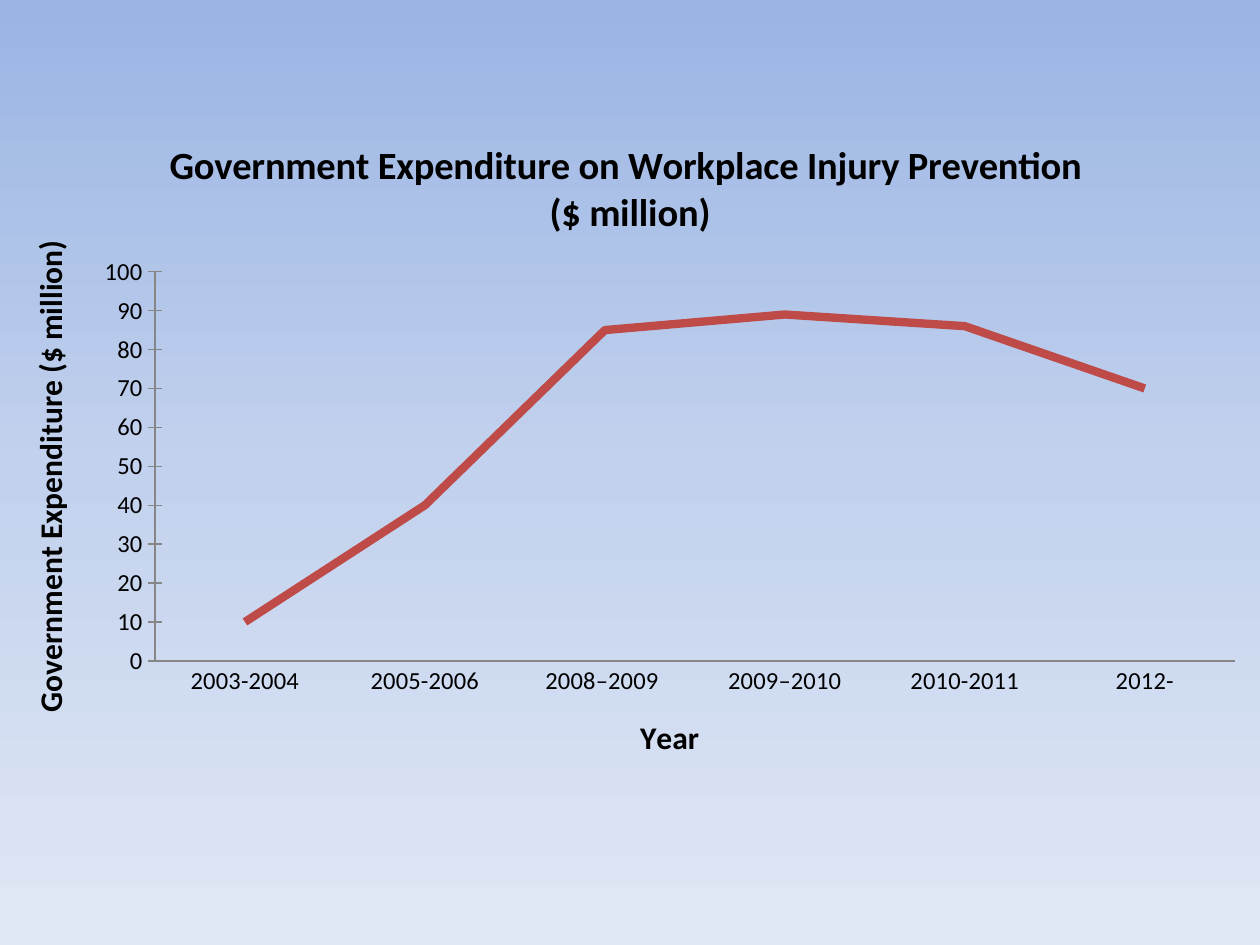
from copy import deepcopy
from dataclasses import dataclass

from pptx import Presentation
from pptx.chart.data import CategoryChartData
from pptx.dml.color import RGBColor
from pptx.enum.chart import XL_CHART_TYPE, XL_TICK_MARK
from pptx.util import Inches, Pt


@dataclass(frozen=True)
class Theme:
    font: str = "Calibri"
    ink: str = "000000"
    axis: str = "868686"
    trend: str = "BE4B48"
    sky: tuple = ((0, "9AB5E4"), (0.5, "C2D1ED"), (1, "E1E8F5"))
    title_size: int = 22
    axis_title_size: int = 18
    label_size: int = 14
    base_size: int = 10


THEME = Theme()
SPENDING = {
    "2003-2004": 10,
    "2005-2006": 40,
    "2008–2009 ": 85,
    "2009–2010": 89,
    "2010-2011": 86,
    "2012-": 70,
}


def style_font(font, size, bold=False, color=THEME.ink):
    font.name = THEME.font
    font.size = Pt(size)
    font.bold = bold
    font.color.rgb = RGBColor.from_string(color)


def write_text(frame, text, **style):
    for index, line in enumerate(text.split("\n")):
        paragraph = frame.add_paragraph() if index else frame.paragraphs[0]
        run = paragraph.add_run()
        run.text = line
        style_font(run.font, **style)


def paint_background(slide):
    fill = slide.background.fill
    fill.gradient()
    fill.gradient_angle = 270
    first_stop = fill.gradient_stops[0]._gs
    first_stop.addnext(deepcopy(first_stop))
    for stop, (position, color) in zip(fill.gradient_stops, THEME.sky):
        stop.position = position
        stop.color.rgb = RGBColor.from_string(color)


def format_axis(axis, title, tick_mark):
    axis.has_major_gridlines = False
    axis.major_tick_mark = tick_mark
    axis.minor_tick_mark = XL_TICK_MARK.NONE
    axis.format.line.color.rgb = RGBColor.from_string(THEME.axis)
    axis.format.line.width = Pt(0.75)
    style_font(axis.tick_labels.font, THEME.label_size)
    write_text(axis.axis_title.text_frame, title, size=THEME.axis_title_size, bold=True)


def add_spending_chart(slide):
    spending = CategoryChartData()
    spending.categories = list(SPENDING)
    spending.add_series("Series 1", list(SPENDING.values()))
    chart = slide.shapes.add_chart(
        XL_CHART_TYPE.LINE, Inches(0), Inches(0.92), Inches(10), Inches(5.33), spending
    ).chart
    style_font(chart.font, THEME.base_size)
    chart.has_legend = False
    write_text(
        chart.chart_title.text_frame,
        "Government Expenditure on Workplace Injury Prevention \n($ million)",
        size=THEME.title_size,
        bold=True,
    )
    format_axis(chart.category_axis, "Year", XL_TICK_MARK.NONE)
    format_axis(chart.value_axis, "Government Expenditure ($ million)", XL_TICK_MARK.CROSS)
    chart.value_axis.minimum_scale = 0
    chart.value_axis.maximum_scale = 100
    chart.value_axis.major_unit = 10

    chart.plots[0].vary_by_categories = False
    trend = chart.plots[0].series[0]
    trend.smooth = False
    trend.format.line.color.rgb = RGBColor.from_string(THEME.trend)
    trend.format.line.width = Pt(4.75)


def main():
    presentation = Presentation()
    presentation.slide_width = Inches(10)
    presentation.slide_height = Inches(7.5)
    slide = presentation.slides.add_slide(presentation.slide_layouts[6])
    paint_background(slide)
    add_spending_chart(slide)
    presentation.save("out.pptx")


if __name__ == "__main__":
    main()
